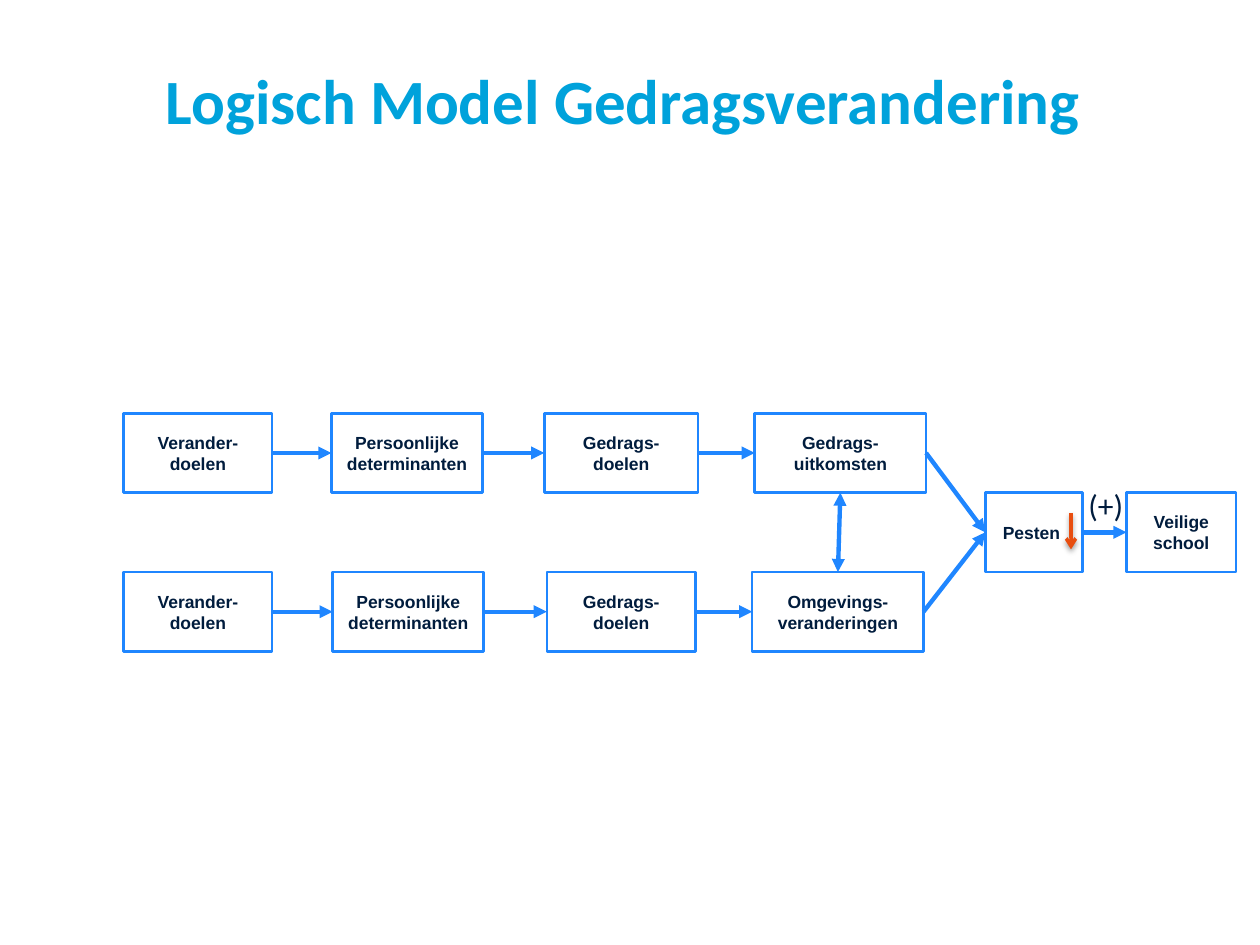
from lxml.etree import SubElement
from pptx import Presentation
from pptx.dml.color import RGBColor
from pptx.enum.shapes import MSO_CONNECTOR as Connector, MSO_SHAPE as Shape
from pptx.enum.text import MSO_ANCHOR as Anchor, PP_ALIGN as Align
from pptx.oxml.ns import qn
from pptx.util import Inches, Pt

COLORS = {"title": "00A2DB", "text": "001C3D", "flow": "1F86FF",
          "decrease": "E84E10", "paper": "FFFFFF", "shadow": "000000"}

prs = Presentation()
prs.slide_width, prs.slide_height = Inches(10), Inches(7.5)
slide = prs.slides.add_slide(prs.slide_layouts[6])
col, row = prs.slide_width / 100, prs.slide_height / 75


def write(frame, words, size, font, color, bold, align):
    paragraph = frame.paragraphs[0]
    paragraph.alignment = align
    run = paragraph.add_run()
    run.text = words
    run.font.size, run.font.name, run.font.bold = Pt(size), font, bold
    run.font.color.rgb = RGBColor.from_string(COLORS[color])


def arrow(points, color, width, ends):
    x1, y1, x2, y2 = points
    line = slide.shapes.add_connector(Connector.STRAIGHT, int(x1 * col), int(y1 * row),
                                      int(x2 * col), int(y2 * row))
    line.line.color.rgb = RGBColor.from_string(COLORS[color])
    line.line.width = Pt(width)
    for end, kind in ends.items():
        SubElement(line.line._get_or_add_ln(), qn(f"a:{end}"), type=kind)
    effects = SubElement(line._element.spPr, qn("a:effectLst"))
    return line, effects


title = slide.shapes.add_textbox(int(3.9 * col), int(4.5 * row), int(91.1 * col), int(8.3 * row))
title.text_frame.word_wrap = True
title.text_frame.margin_left = title.text_frame.margin_right = title.text_frame.margin_bottom = 0
title.text_frame.margin_top = int(0.4 * row)
write(title.text_frame, "Logisch Model Gedragsverandering", 36, "Calibri", "title", True, Align.CENTER)

person_row, outcome_row, environment_row = 32.8, 39.1, 45.4
step_height = 6.3
steps = {
    "person": (person_row, [("Verander-doelen", 9.8, 11.8),
                            ("Persoonlijke determinanten", 26.3, 12),
                            ("Gedrags-doelen", 43.2, 12.2),
                            ("Gedrags-uitkomsten", 59.9, 13.6)]),
    "environment": (environment_row, [("Verander-doelen", 9.8, 11.8),
                                      ("Persoonlijke determinanten", 26.4, 12),
                                      ("Gedrags-doelen", 43.4, 11.8),
                                      ("Omgevings-veranderingen", 59.7, 13.6)]),
    "outcome": (outcome_row, [("Pesten ", 78.2, 7.7), ("Veilige school", 89.4, 8.7)]),
}

chains = {}
for chain, (top, parts) in steps.items():
    chains[chain] = []
    for label, left, width in parts:
        step = slide.shapes.add_shape(Shape.RECTANGLE, int(left * col), int(top * row),
                                      int(width * col), int(step_height * row))
        step.shadow.inherit = False
        if label == "Verander-doelen":
            step.fill.solid()
            step.fill.fore_color.rgb = RGBColor.from_string(COLORS["paper"])
        else:
            step.fill.background()
        step.line.color.rgb = RGBColor.from_string(COLORS["flow"])
        step.line.width = Pt(1.5)
        step.text_frame.word_wrap = True
        step.text_frame.vertical_anchor = Anchor.MIDDLE
        write(step.text_frame, label, 10, "Arial", "text", True, Align.CENTER)
        chains[chain].append(step)

TOP, LEFT, BOTTOM, RIGHT = range(4)
one_way = {"tailEnd": "triangle"}
both_ways = {"headEnd": "triangle", "tailEnd": "triangle"}
bullying = chains["outcome"][0]
behaviour, surroundings = chains["person"][-1], chains["environment"][-1]

links = [(start, RIGHT, end, LEFT, one_way)
         for chain in chains.values() for start, end in zip(chain, chain[1:])]
links += [(start, RIGHT, bullying, LEFT, one_way) for start in (behaviour, surroundings)]
links.append((surroundings, TOP, behaviour, BOTTOM, both_ways))
for start, start_side, end, end_side, ends in links:
    link, _ = arrow((0, 0, 1, 1), "flow", 2.5, ends)
    link.begin_connect(start, start_side)
    link.end_connect(end, end_side)

_, effects = arrow((85, 40.7, 85, 43.6), "decrease", 2, {"tailEnd": "arrow"})
shadow = SubElement(effects, qn("a:outerShdw"), blurRad=str(Pt(3.1)), dist=str(Pt(1.6)),
                    dir="5400000", rotWithShape="0")
shade = SubElement(shadow, qn("a:srgbClr"), val=COLORS["shadow"])
SubElement(shade, qn("a:alpha"), val="38000")

effect = slide.shapes.add_textbox(int(85.4 * col), int(38.1 * row), int(5.9 * col), int(4 * row))
effect.text_frame.word_wrap = True
write(effect.text_frame, "(+)", 18, "Calibri", "text", False, Align.LEFT)

prs.save("out.pptx")
